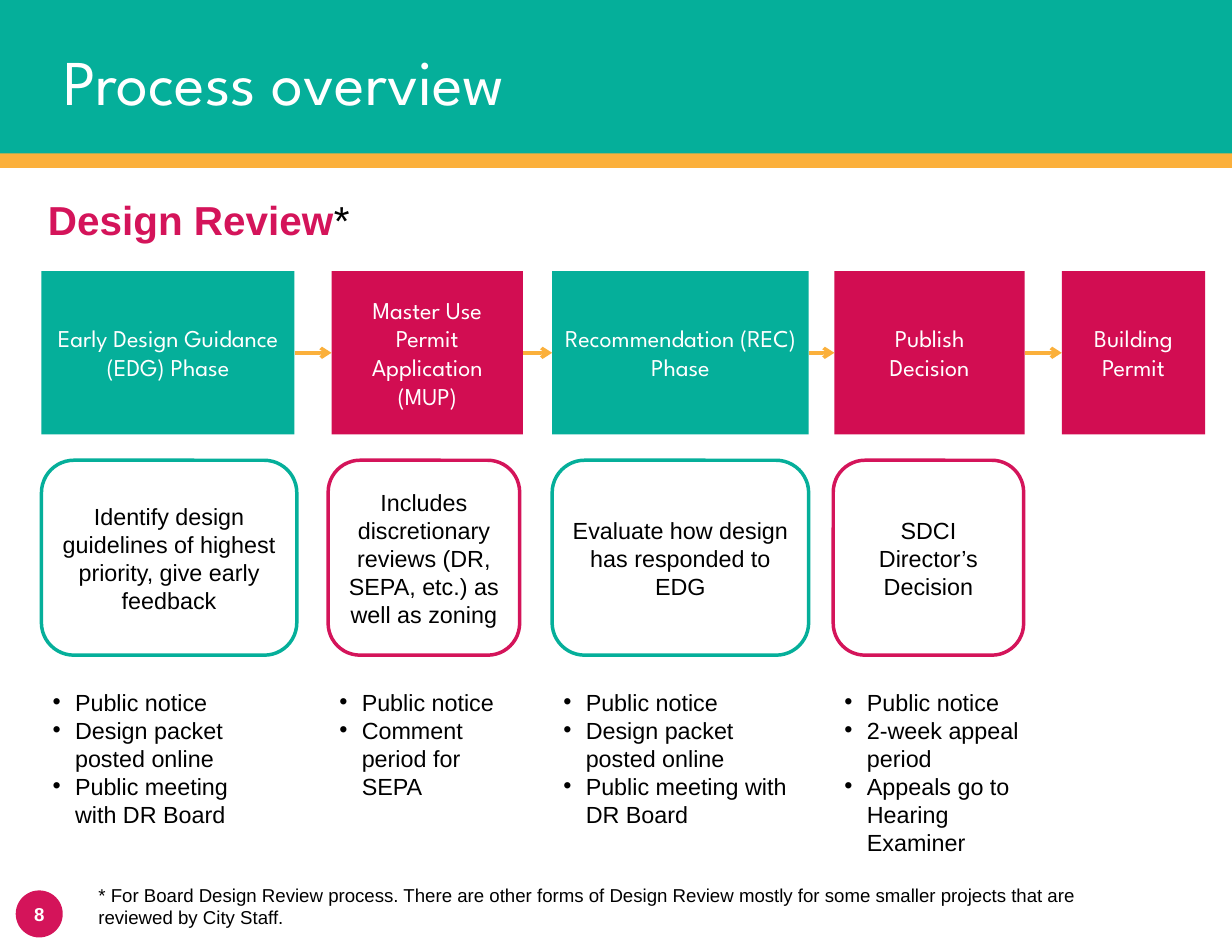
from dataclasses import dataclass
from itertools import pairwise

from lxml.etree import SubElement
from pptx import Presentation
from pptx.dml.color import RGBColor
from pptx.enum.shapes import MSO_CONNECTOR as Link, MSO_SHAPE as Preset
from pptx.enum.text import MSO_ANCHOR as Anchor, MSO_AUTO_SIZE as Fit, PP_ALIGN as Align
from pptx.oxml.ns import qn
from pptx.util import Emu, Inches, Pt

COLORS = {
    "teal": "05AF9A", "crimson": "D20D52", "rose": "D4145A",
    "amber": "FBB03B", "white": "FFFFFF", "black": "000000",
}
HEADING, BODY = "League Spartan", "Arial"

# The slide is a grid of 110 columns by 85 rows
WIDTH, HEIGHT = Inches(11), Inches(8.5)
COLUMN, ROW = WIDTH / 110, HEIGHT / 85
STEP_ROW, STEP_ROWS = 24.2, 14.6
NOTE_ROW, NOTE_ROWS = 41.1, 17.4
LIST_ROW, LIST_ROWS = 60.9, 16.2


@dataclass(frozen=True)
class Area:
    column: float
    row: float
    columns: float
    rows: float

    def lengths(self) -> tuple:
        return (Emu(round(self.column * COLUMN)), Emu(round(self.row * ROW)),
                Emu(round(self.columns * COLUMN)), Emu(round(self.rows * ROW)))


@dataclass(frozen=True)
class Style:
    font: str
    size: float
    color: str
    bold: bool = False


@dataclass(frozen=True)
class Phase:
    column: float
    columns: float
    lines: tuple
    fill: str
    outline: str = ""
    note: str = ""
    note_column: float = 0
    note_columns: float = 0
    list_columns: float = 0
    items: tuple = ()


STEP = Style(HEADING, 15.5, "white")
NOTE = Style(BODY, 15, "black")

PHASES = (
    Phase(3.7, 22.6, ("Early Design Guidance (EDG) Phase",), "teal", "teal",
          "Identify design guidelines of highest priority, give early feedback",
          3.7, 22.8, 21.4,
          ("Public notice", "Design packet posted online", "Public meeting with DR Board")),
    Phase(29.6, 17.1, ("Master Use Permit Application (MUP)",), "crimson", "rose",
          "Includes discretionary reviews (DR, SEPA, etc.) as well as zoning",
          29.3, 17.1, 18.7,
          ("Public notice", "Comment period for SEPA")),
    Phase(49.3, 22.9, ("Recommendation (REC) Phase",), "teal", "teal",
          "Evaluate how design has responded to EDG",
          49.3, 22.9, 22.9,
          ("Public notice", "Design packet posted online", "Public meeting with DR Board")),
    Phase(74.5, 17, ("Publish", "Decision"), "crimson", "rose",
          "SDCI Director’s Decision",
          74.4, 17, 20.3,
          ("Public notice", "2-week appeal period", "Appeals go to Hearing Examiner")),
    Phase(94.8, 12.8, ("Building Permit",), "crimson"),
)


def rgb(name: str) -> RGBColor:
    return RGBColor.from_string(COLORS[name])


def add_span(para, text: str, style: Style) -> None:
    span = para.add_run()
    span.text = text
    span.font.name, span.font.size = style.font, Pt(style.size)
    span.font.bold = style.bold
    span.font.color.rgb = rgb(style.color)


def write(box, lines: tuple, align=Align.LEFT, anchor=Anchor.TOP) -> None:
    """Fill a box with paragraphs, each a tuple of (text, style) runs."""
    frame = box.text_frame
    frame.word_wrap, frame.auto_size = True, Fit.NONE
    frame.vertical_anchor = anchor
    for number, runs in enumerate(lines):
        para = frame.paragraphs[0] if number == 0 else frame.add_paragraph()
        para.alignment, para.space_before = align, Pt(0)
        for text, style in runs:
            add_span(para, text, style)


def add_block(page, preset, area: Area, fill: str = "", outline: str = ""):
    block = page.shapes.add_shape(preset, *area.lengths())
    block.shadow.inherit = False
    if fill:
        block.fill.solid()
        block.fill.fore_color.rgb = rgb(fill)
    else:
        block.fill.background()
    if outline:
        block.line.color.rgb = rgb(outline)
        block.line.width = Pt(2.25)
    else:
        block.line.fill.background()
    return block


def add_text(page, area: Area, *runs: tuple) -> None:
    write(page.shapes.add_textbox(*area.lengths()), (runs,))


def add_arrow(page, start, end) -> None:
    arrow = page.shapes.add_connector(Link.STRAIGHT, 0, 0, 0, 0)
    arrow.begin_connect(start, 3)
    arrow.end_connect(end, 1)
    arrow.line.color.rgb = rgb("amber")
    arrow.line.width = Pt(2.25)
    SubElement(arrow.line._get_or_add_ln(), qn("a:tailEnd"), type="arrow")
    SubElement(arrow.element.spPr, qn("a:effectLst"))


def place(holder, area: Area) -> None:
    """Move a placeholder to its area and in front of earlier shapes."""
    holder.left, holder.top, holder.width, holder.height = area.lengths()
    holder.element.getparent().append(holder.element)


def fill_list(holder, phase: Phase) -> None:
    place(holder, Area(phase.note_column, LIST_ROW, phase.list_columns, LIST_ROWS))
    write(holder, tuple(((item, NOTE),) for item in phase.items))
    for para in holder.text_frame.paragraphs:
        props = para._p.get_or_add_pPr()
        props.set("marL", str(Inches(0.2)))
        props.set("indent", str(-Inches(0.2)))
        SubElement(props, qn("a:buFont"), typeface=BODY)
        SubElement(props, qn("a:buChar"), char="•")


def main() -> None:
    deck = Presentation()
    deck.slide_width, deck.slide_height = WIDTH, HEIGHT
    page = deck.slides.add_slide(deck.slide_layouts.get_by_name("Comparison"))
    title, *lists = page.placeholders

    # Banner, title and page number
    add_block(page, Preset.RECTANGLE, Area(0, 0, 110, 13.9), "teal")
    add_block(page, Preset.RECTANGLE, Area(0, 13.7, 110, 1.3), "amber")
    place(title, Area(4.7, 3.2, 94.1, 7.9))
    write(title, ((("Process overview", Style(HEADING, 41, "white")),),), anchor=Anchor.MIDDLE)
    badge = add_block(page, Preset.OVAL, Area(1.4, 79.5, 4.2, 4.2), "rose")
    badge.text_frame.margin_left = badge.text_frame.margin_right = 0
    write(badge, ((("8", Style(BODY, 12, "white", True)),),), Align.CENTER, Anchor.MIDDLE)

    # Section heading
    add_text(page, Area(3.3, 16.9, 57.5, 5.4),
             ("Design Review", Style(BODY, 26, "rose", True)),
             ("*", Style(BODY, 26, "black")))

    # Steps joined by arrows
    steps = []
    for phase in PHASES:
        step = add_block(page, Preset.RECTANGLE,
                         Area(phase.column, STEP_ROW, phase.columns, STEP_ROWS), phase.fill)
        write(step, tuple(((line, STEP),) for line in phase.lines), Align.CENTER, Anchor.MIDDLE)
        steps.append(step)
    for start, end in pairwise(steps):
        add_arrow(page, start, end)

    # Notes and lists under the first four steps
    for phase, holder in zip(PHASES, lists):
        note = add_block(page, Preset.FLOWCHART_ALTERNATE_PROCESS,
                         Area(phase.note_column, NOTE_ROW, phase.note_columns, NOTE_ROWS),
                         outline=phase.outline)
        write(note, (((phase.note, NOTE),),), Align.CENTER, Anchor.MIDDLE)
        fill_list(holder, phase)

    # Footnote
    add_text(page, Area(7.8, 78.4, 93.9, 5),
             ("* For Board Design Review process. There are other forms of Design Review "
              "mostly for some smaller projects that are reviewed by City Staff.",
              Style(BODY, 12, "black")))

    deck.save("out.pptx")


if __name__ == "__main__":
    main()
